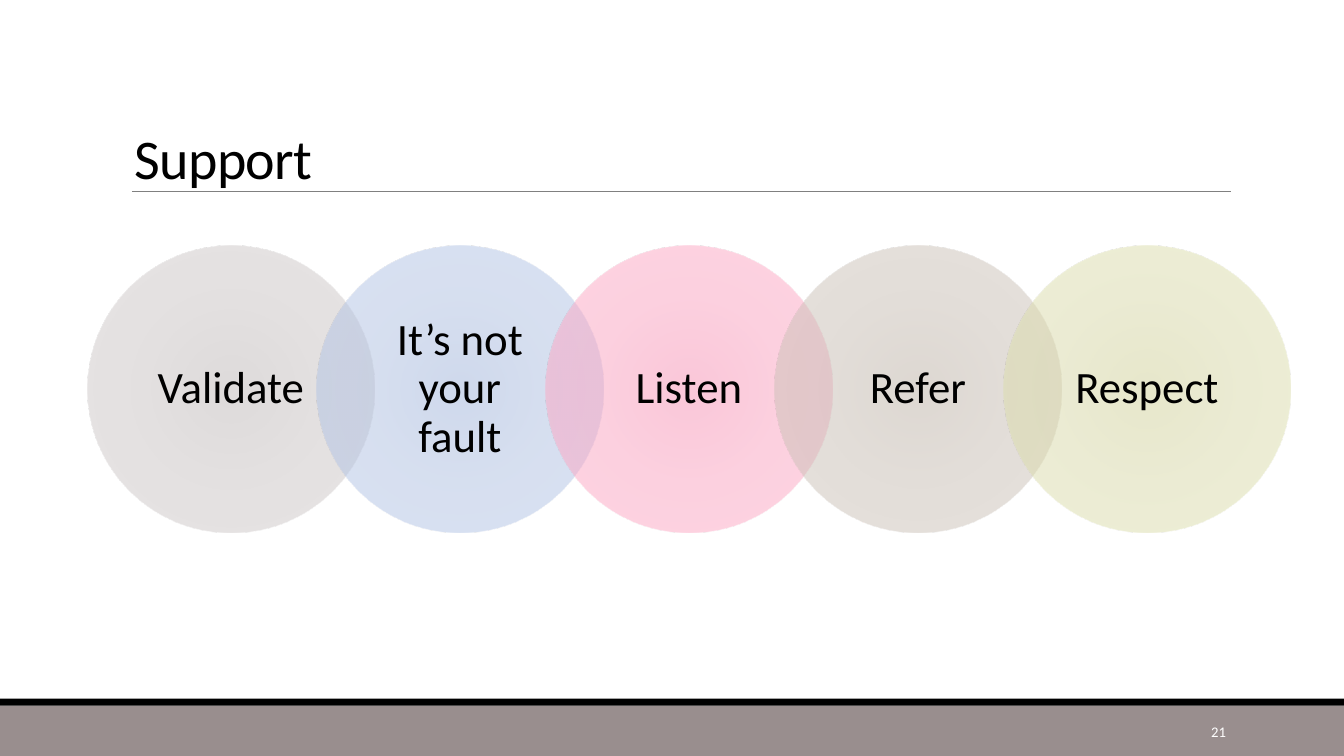
from dataclasses import dataclass

from lxml.etree import fromstring
from pptx import Presentation
from pptx.dml.color import RGBColor
from pptx.enum.shapes import MSO_CONNECTOR as Link, MSO_SHAPE as Kind
from pptx.enum.text import MSO_ANCHOR as Anchor, PP_ALIGN as Align
from pptx.oxml.ns import nsdecls, qn
from pptx.util import Pt

WIDTH, HEIGHT = 960, 540
LEFT, TOP, SIZE, STEP = 62.7, 175.7, 204.5, 163.6


@dataclass
class Circle:
    label: str
    inner: str
    middle: str
    outer: str


CIRCLES = [
    Circle("Validate", "BEB8B8", "CAC4C4", "D0CACA"),
    Circle("It’s not your fault", "A0B4DB", "B0C1E2", "B5C6E9"),
    Circle("Listen", "F790B4", "FBA3C1", "FFABC7"),
    Circle("Refer", "BDB2A6", "C8BEB4", "CFC5BB"),
    Circle("Respect", "D1D199", "D9D9A9", "E0E1B0"),
]


def color(code: str) -> RGBColor:
    return RGBColor.from_string(code)


def write(shape, text: str, *, size: float, ink: str = "000000",
          align=Align.LEFT, anchor=Anchor.MIDDLE, lead: float = 1,
          track: float = 0, side: float = 7.2, edge: float = 3.6) -> None:
    """Fill a shape with one formatted paragraph; track is letter spacing."""
    frame = shape.text_frame
    frame.word_wrap = True
    frame.vertical_anchor = anchor
    frame.margin_left = frame.margin_right = Pt(side)
    frame.margin_top = frame.margin_bottom = Pt(edge)
    para = frame.paragraphs[0]
    para.alignment = align
    para.line_spacing = lead
    run = para.add_run()
    run.text = text
    run.font.name = "Calibri"
    run.font.size = Pt(size)
    run.font.color.rgb = color(ink)
    if track:
        run.font._element.set("spc", str(round(track * 100)))


def add_box(slide, x: float, y: float, w: float, h: float):
    return slide.shapes.add_textbox(Pt(x), Pt(y), Pt(w), Pt(h))


def add_shape(slide, kind, x: float, y: float, w: float, h: float):
    """Add a preset shape with no shadow, line or fill."""
    shape = slide.shapes.add_shape(kind, Pt(x), Pt(y), Pt(w), Pt(h))
    shape.shadow.inherit = False
    shape.line.fill.background()
    shape.fill.background()
    return shape


def add_band(slide, y: float, h: float, fill: str) -> None:
    band = add_shape(slide, Kind.RECTANGLE, 0, y, WIDTH, h)
    band.fill.solid()
    band.fill.fore_color.rgb = color(fill)


def add_rule(slide, x: float, end: float, y: float) -> None:
    rule = slide.shapes.add_connector(Link.STRAIGHT, Pt(x), Pt(y), Pt(end), Pt(y))
    rule.line.color.rgb = color("808080")
    rule.line.width = Pt(0.5)
    rule._element.spPr.append(fromstring(f'<a:effectLst {nsdecls("a")}/>'))


def shade(shape, circle: Circle) -> None:
    """Give a shape a half-transparent radial gradient."""
    stops = "".join(
        f'<a:gs pos="{pos}000"><a:srgbClr val="{code}">'
        '<a:alpha val="50000"/></a:srgbClr></a:gs>'
        for pos, code in ((0, circle.inner), (45, circle.middle), (100, circle.outer))
    )
    full = " ".join(f'{side}="100000"' for side in "ltrb")
    grad = fromstring(
        f'<a:gradFill {nsdecls("a")} rotWithShape="1"><a:gsLst>{stops}</a:gsLst>'
        f'<a:path path="circle"><a:fillToRect {full}/></a:path></a:gradFill>'
    )
    props = shape._element.spPr
    props.replace(props.find(qn("a:noFill")), grad)


def add_circle(slide, place: int, circle: Circle) -> None:
    disc = add_shape(slide, Kind.OVAL, LEFT + place * STEP, TOP, SIZE, SIZE)
    shade(disc, circle)
    write(disc, circle.label, size=32, align=Align.CENTER, lead=0.9,
          side=11.5, edge=2.9)


def main() -> None:
    deck = Presentation()
    deck.slide_width, deck.slide_height = Pt(WIDTH), Pt(HEIGHT)
    slide = deck.slides.add_slide(deck.slide_layouts[6])

    add_band(slide, 504, 36, "998E8E")
    add_band(slide, 499, 5, "000000")
    add_rule(slide, 94.3, 879, 136.8)
    write(add_box(slide, 89.3, 25.2, 792, 114.5), "Support", size=40,
          anchor=Anchor.BOTTOM, lead=0.85, track=-0.5)
    for place, circle in enumerate(CIRCLES):
        add_circle(slide, place, circle)
    write(add_box(slide, 779.8, 508.3, 103, 28.8), "21", size=10.5,
          ink="FFFFFF", align=Align.RIGHT)

    deck.save("out.pptx")


if __name__ == "__main__":
    main()
